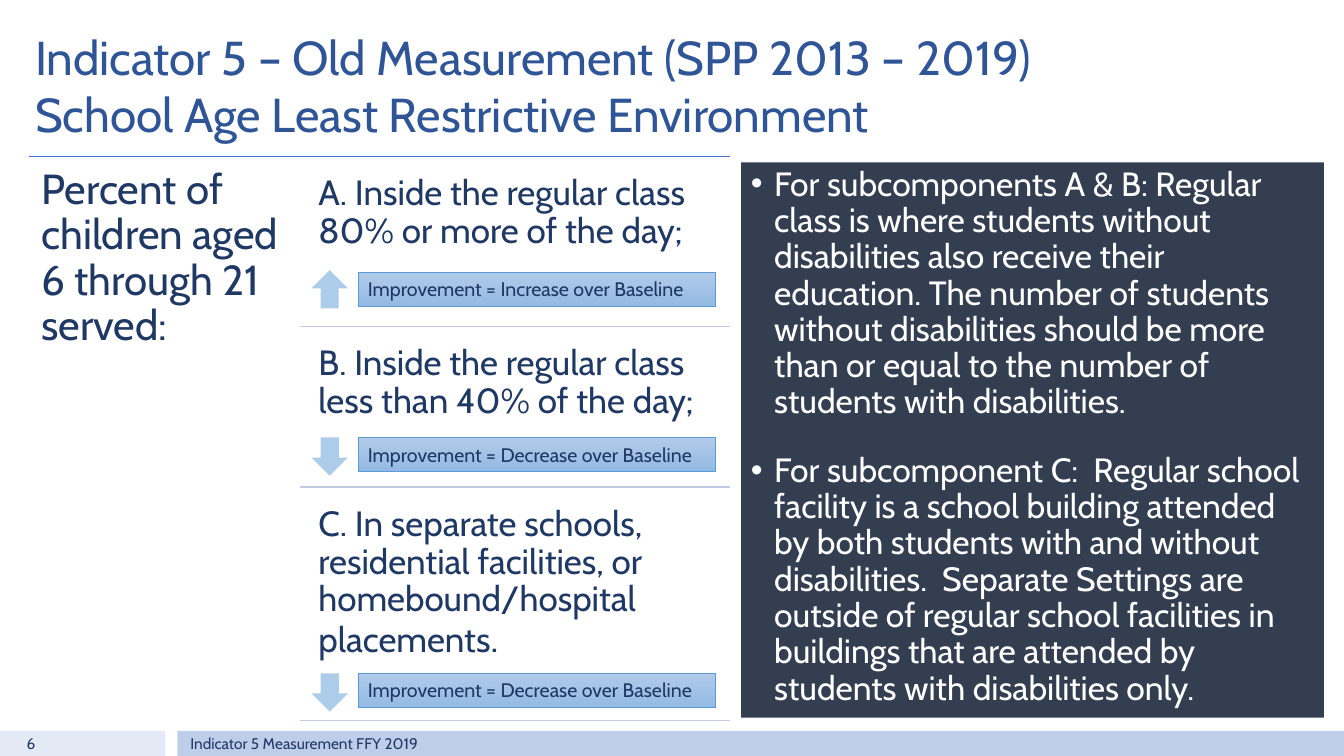
from lxml import etree
from pptx import Presentation
from pptx.dml.color import RGBColor
from pptx.enum.shapes import MSO_CONNECTOR, MSO_SHAPE
from pptx.enum.text import MSO_ANCHOR as ANCHOR, PP_ALIGN as ALIGN
from pptx.oxml.ns import qn
from pptx.util import Inches, Pt

FONT = "Cabin"
NAVY = "1F3864"
FOOTER_NAVY = "203864"
ACCENT = "5B9BD5"
DIVIDER = "C1C9E4"

# top, height, divider position, badge top, arrow top, direction, runs of (text, size)
SUBCOMPONENTS = [
    (1.64, 1.59, 3.24, 2.7, 2.68, "Increase",
     [("A. Inside the regular class 80% or more of the day;", 25)]),
    (3.33, 1.5, 4.83, 4.34, 4.34, "Decrease",
     [("B. Inside the regular class less than 40% of the day;", 25)]),
    (4.92, 2.23, 7.15, 6.68, 6.68, "Decrease",
     [("C. In separate schools, residential facilities, or "
       "homebound/hospital placements", 25), (".", 27)]),
]

DEFINITIONS = [
    "For subcomponents A & B: Regular class is where students without "
    "disabilities also receive their education. The number of students "
    "without disabilities should be more than or equal to the number of "
    "students with disabilities.",
    "For subcomponent C:  Regular school facility is a school building "
    "attended by both students with and without disabilities.  Separate "
    "Settings are outside of regular school facilities in buildings that "
    "are attended by students with disabilities only.",
]


def rgb(value):
    return RGBColor.from_string(value)


def apply(target, formats):
    for name, value in formats.items():
        setattr(target, name, value)


def style_font(font, size, color):
    apply(font, {"name": FONT, "size": Pt(size)})
    font.color.rgb = rgb(color)


def prepare_frame(shape, inset=None, anchor=ANCHOR.TOP):
    frame = shape.text_frame
    apply(frame, {"word_wrap": True, "vertical_anchor": anchor})
    if inset is not None:
        for side in ("left", "top", "right", "bottom"):
            setattr(frame, f"margin_{side}", Inches(inset))
    return frame


def write_runs(paragraph, runs, color, **formats):
    """Fill a paragraph with (text, size) runs; a line feed is a line break."""
    apply(paragraph, {"alignment": ALIGN.LEFT, **formats})
    for text, size in runs:
        for index, line in enumerate(text.split("\n")):
            if index:
                paragraph.add_line_break()
            run = paragraph.add_run()
            run.text = line
            style_font(run.font, size, color)


def add_text(slide, box, runs, color, inset=None, anchor=ANCHOR.TOP, **formats):
    shape = slide.shapes.add_textbox(*map(Inches, box))
    frame = prepare_frame(shape, inset, anchor)
    write_runs(frame.paragraphs[0], runs, color, **formats)


def add_block(slide, box, fill=None, kind=MSO_SHAPE.RECTANGLE):
    shape = slide.shapes.add_shape(kind, *map(Inches, box))
    shape.shadow.inherit = False
    shape.line.fill.background()
    if fill:
        shape.fill.solid()
        shape.fill.fore_color.rgb = rgb(fill)
    return shape


def add_rule(slide, left, top, color):
    """Draw a horizontal line that ends at the right edge of the left panel."""
    line = slide.shapes.add_connector(
        MSO_CONNECTOR.STRAIGHT, *map(Inches, (left, top, 7.24, top)))
    line.line.color.rgb = rgb(color)
    line.line.width = Pt(1)
    etree.SubElement(line._element.spPr, qn("a:effectLst"))


def add_arrow(slide, top, direction):
    arrow = add_block(slide, (3.09, top, 0.36, 0.38), ACCENT, MSO_SHAPE.UP_ARROW)
    arrow.rotation = 0 if direction == "Increase" else 180
    color = arrow._element.spPr.find(qn("a:solidFill"))[0]
    etree.SubElement(color, qn("a:alpha"), val="50000")


def add_badge(slide, top, direction):
    badge = add_block(slide, (3.55, top, 3.55, 0.34))
    badge.fill.gradient()
    badge.fill.gradient_angle = 270
    for stop, color in zip(badge.fill.gradient_stops, ("B1CBE9", "93B9E4")):
        stop.color.rgb = rgb(color)
    badge.line.color.rgb = rgb(ACCENT)
    badge.line.width = Pt(0.5)
    write_runs(prepare_frame(badge).paragraphs[0],
               [(f"Improvement = {direction} over Baseline", 14)], NAVY)


def add_bullet(paragraph):
    properties = paragraph._p.get_or_add_pPr()
    indent = Inches(0.23)
    properties.set("marL", str(indent))
    properties.set("indent", str(-indent))
    etree.SubElement(properties, qn("a:buFont"), typeface="Arial")
    etree.SubElement(properties, qn("a:buChar"), char="•")


def add_definitions(slide):
    panel = add_block(slide, (7.35, 1.61, 5.78, 5.51), "333F50")
    frame = prepare_frame(panel)
    for index, text in enumerate(DEFINITIONS):
        paragraph = frame.add_paragraph() if index else frame.paragraphs[0]
        add_bullet(paragraph)
        write_runs(paragraph, [(text, 24)], "FFFFFF", line_spacing=0.9,
                   space_before=Pt(11 if index else 0), space_after=Pt(12))


def add_footer(slide):
    add_block(slide, (0, 7.25, 1.64, 0.25), "E3EAF6")
    add_block(slide, (1.76, 7.25, 11.57, 0.25), "BECEEA")
    add_text(slide, (0, 7.25, 0.45, 0.25), [("6", 11)], FOOTER_NAVY,
             anchor=ANCHOR.MIDDLE, alignment=ALIGN.RIGHT)
    add_text(slide, (1.79, 7.25, 10, 0.25),
             [("Indicator 5 Measurement FFY 2019", 11)], FOOTER_NAVY,
             anchor=ANCHOR.MIDDLE)


def main():
    presentation = Presentation()
    apply(presentation, {"slide_width": Inches(13.33), "slide_height": Inches(7.5)})
    slide = presentation.slides.add_slide(presentation.slide_layouts[6])

    add_footer(slide)
    add_text(slide, (0.25, 0.17, 10.57, 1.29),
             [("Indicator 5 – Old Measurement (SPP 2013 – 2019)\n"
               "School Age Least Restrictive Environment", 34)],
             "2F5597", anchor=ANCHOR.BOTTOM)
    add_rule(slide, 0.29, 1.55, "4472C4")
    add_text(slide, (0.29, 1.55, 2.7, 5.7),
             [("Percent of children aged 6 through 21 served:", 30)],
             NAVY, inset=0.12, line_spacing=0.9)
    for top, height, rule, badge, arrow, direction, runs in SUBCOMPONENTS:
        add_text(slide, (3.06, top, 4.18, height), runs, NAVY,
                 inset=0.1, line_spacing=0.9)
        add_rule(slide, 2.98, rule, DIVIDER)
        add_arrow(slide, arrow, direction)
        add_badge(slide, badge, direction)
    add_definitions(slide)
    presentation.save("out.pptx")


if __name__ == "__main__":
    main()
